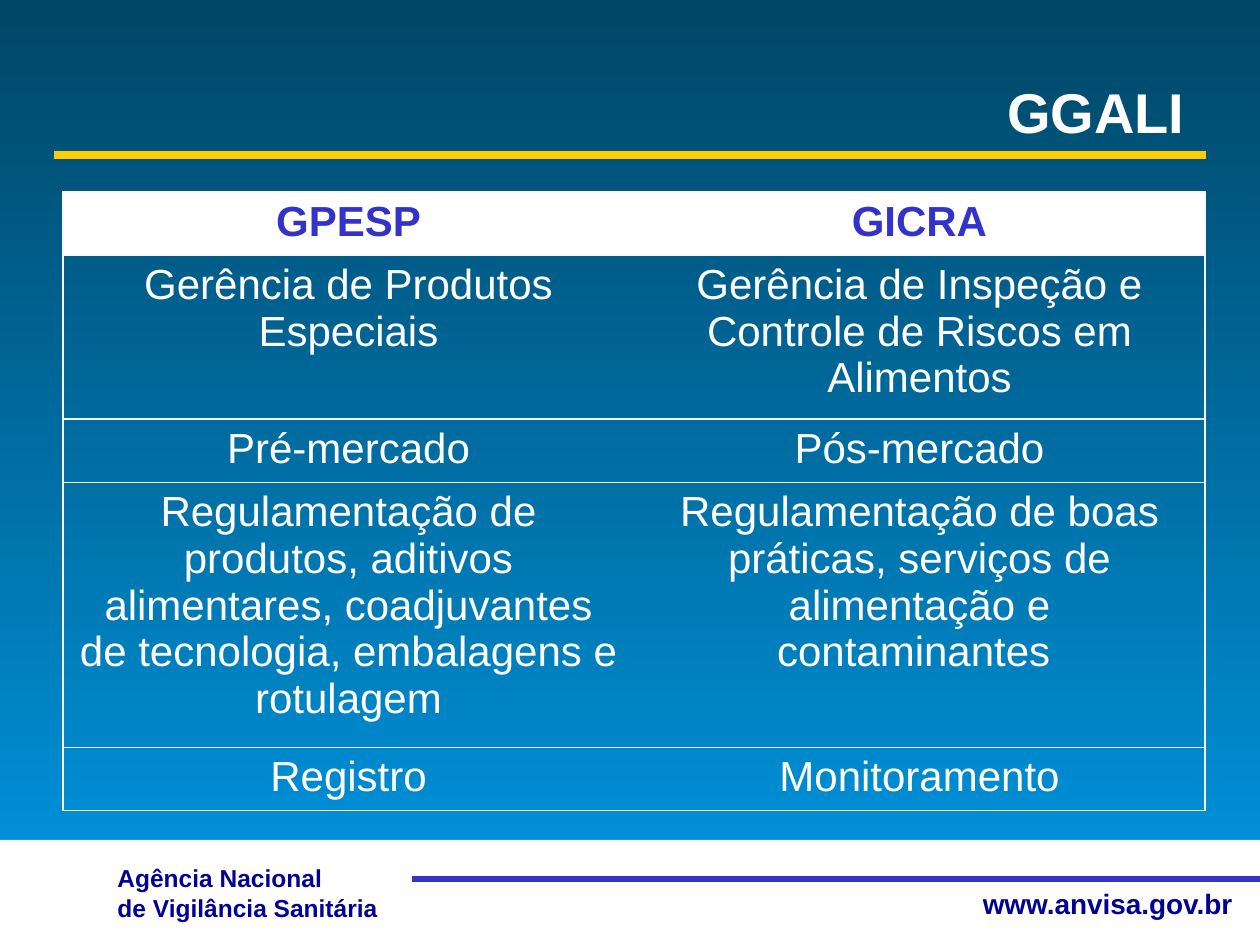
"""Build the GGALI slide comparing the GPESP and GICRA offices."""
from lxml import etree
from pptx import Presentation
from pptx.dml.color import RGBColor
from pptx.enum.shapes import MSO_CONNECTOR, MSO_SHAPE
from pptx.enum.text import MSO_ANCHOR, PP_ALIGN
from pptx.oxml import parse_xml
from pptx.oxml.ns import nsdecls, qn
from pptx.util import Pt

PX = 914400 / 126
LEFT, CENTER, RIGHT = PP_ALIGN.LEFT, PP_ALIGN.CENTER, PP_ALIGN.RIGHT


def emu(*lengths):
    return [round(n * PX) for n in lengths]


def rgb(color):
    return RGBColor.from_string(color)


prs = Presentation()
prs.slide_width, prs.slide_height = emu(1260, 945)
s = prs.slides.add_slide(prs.slide_layouts[6])

bg = s.background.fill
bg.gradient()
bg.gradient_angle = 270
for stop, color in zip(bg.gradient_stops, ("004666", "0098E4")):
    stop.color.rgb = rgb(color)

footer = s.shapes.add_shape(MSO_SHAPE.RECTANGLE, *emu(0, 840, 1260, 105))
footer.shadow.inherit = False
footer.fill.solid()
footer.fill.fore_color.rgb = rgb("FFFFFF")
footer.line.fill.background()

texts = [
    ((105, 857, 306, 72), ["Agência Nacional", "de Vigilância Sanitária"], 14, "000099", LEFT, MSO_ANCHOR.TOP),
    ((930, 880, 315, 47), ["www.anvisa.gov.br"], 16, "000099", RIGHT, MSO_ANCHOR.TOP),
    ((63, 68, 1134, 87), ["GGALI"], 32, "FFFFFF", RIGHT, MSO_ANCHOR.MIDDLE),
]
for box, lines, size, color, align, anchor in texts:
    tf = s.shapes.add_textbox(*emu(*box)).text_frame
    tf.word_wrap = True
    tf.vertical_anchor = anchor
    for i, line in enumerate(lines):
        p = tf.paragraphs[0] if i == 0 else tf.add_paragraph()
        p.alignment = align
        r = p.add_run()
        r.text = line
        r.font.color.rgb = rgb(color)
        for name, value in {"name": "Arial", "size": Pt(size), "bold": True}.items():
            setattr(r.font, name, value)

for x1, x2, y, color, width in [(412, 1260, 879, "3333CC", 3), (54, 1206, 155, "FFCC00", 4.5)]:
    rule = s.shapes.add_connector(MSO_CONNECTOR.STRAIGHT, *emu(x1, y, x2, y))
    rule.line.color.rgb = rgb(color)
    rule.line.width = Pt(width)
    etree.SubElement(rule._element.spPr, qn("a:effectLst"))

rows = [
    (63, "GPESP", "GICRA"),
    (164, "Gerência de Produtos Especiais", "Gerência de Inspeção e Controle de Riscos em Alimentos"),
    (63, "Pré-mercado", "Pós-mercado"),
    (265, "Regulamentação de produtos, aditivos alimentares, coadjuvantes de tecnologia, embalagens e rotulagem",
     "Regulamentação de boas práticas, serviços de alimentação e contaminantes "),
    (63, "Registro", "Monitoramento"),
]
frame = s.shapes.add_table(len(rows), 2, *emu(63, 192, 1142, sum(row[0] for row in rows)))
table = frame.table
table.first_row = table.horz_banding = False
table._tbl.tblPr.find(qn("a:tableStyleId")).text = "{2D5ABB26-0587-4C30-8999-92F81FD0307C}"

for i, (height, *labels) in enumerate(rows):
    table.rows[i].height = emu(height)[0]
    for j, label in enumerate(labels):
        cell = table.cell(i, j)
        for side in ("lnR" if j else "lnL", "lnT", "lnB"):
            cell._tc.get_or_add_tcPr().append(parse_xml(
                f'<a:{side} {nsdecls("a")} w="9525"><a:solidFill><a:srgbClr val="F9F9F9"/></a:solidFill></a:{side}>'))
        if i == 0:
            cell.fill.solid()
            cell.fill.fore_color.rgb = rgb("FFFFFF")
        else:
            cell.fill.background()
        p = cell.text_frame.paragraphs[0]
        p.alignment = CENTER
        r = p.add_run()
        r.text = label
        r.font.color.rgb = rgb("FFFFFF" if i else "3333CC")
        for name, value in {"name": "Arial", "size": Pt(24), "bold": i == 0}.items():
            setattr(r.font, name, value)

prs.save("out.pptx")
